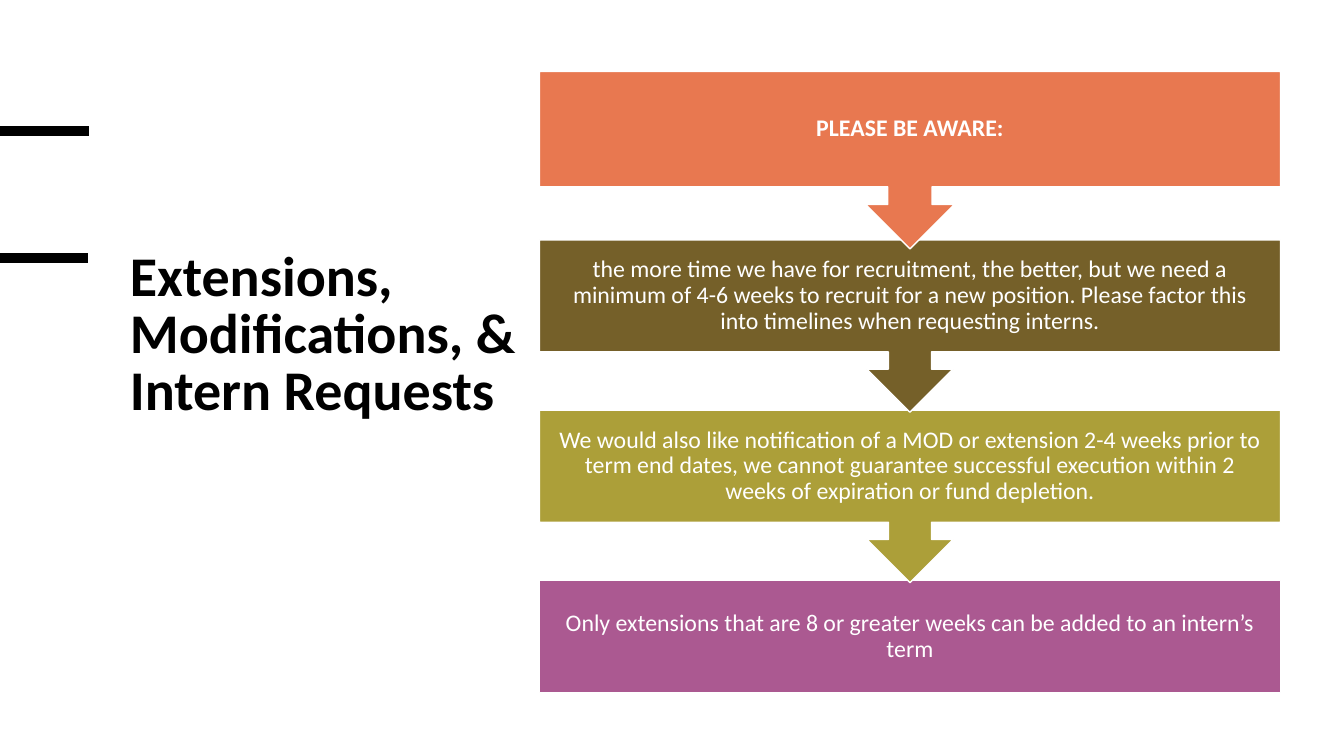
from lxml.etree import SubElement
from pptx import Presentation
from pptx.dml.color import RGBColor
from pptx.enum.shapes import MSO_CONNECTOR, MSO_SHAPE
from pptx.enum.text import MSO_ANCHOR, PP_ALIGN
from pptx.oxml.ns import qn
from pptx.util import Inches, Pt

COLORS = {
    "black": "000000",
    "white": "FFFFFF",
    "orange": "E87850",
    "brown": "756029",
    "olive": "AC9F39",
    "purple": "AB5991",
}

TITLE = "Extensions, Modifications, & Intern Requests"
TITLE_BOX = (1.19, 2.44, 4.16, 3.67)
ACCENT_RULES = [(0, 0.88, 1.3), (-0.01, 0.87, 2.56)]

STEPS = [
    ("PLEASE BE AWARE:", "orange", 0.71, 1.76, True),
    ("the more time we have for recruitment, the better, but we need a minimum of "
     "4-6 weeks to recruit for a new position. Please factor this into timelines "
     "when requesting interns.", "brown", 2.38, 1.71, False),
    ("We would also like notification of a MOD or extension 2-4 weeks prior to term "
     "end dates, we cannot guarantee successful execution within 2 weeks of "
     "expiration or fund depletion.", "olive", 4.07, 1.71, False),
    ("Only extensions that are 8 or greater weeks can be added to an intern’s term",
     "purple", 5.76, 1.11, False),
]
STEP_LEFT, STEP_WIDTH, STEP_INSET = 5.35, 7.35, 0.13


def rgb(name):
    return RGBColor.from_string(COLORS[name])


def write(frame, text, size, color, bold=False, align=PP_ALIGN.LEFT,
          anchor=MSO_ANCHOR.TOP, spacing=0.9, inset=None):
    frame.word_wrap = True
    frame.vertical_anchor = anchor
    if inset is not None:
        frame.margin_left = frame.margin_right = Inches(inset)
        frame.margin_top = frame.margin_bottom = Inches(inset)
    paragraph = frame.paragraphs[0]
    paragraph.alignment = align
    paragraph.line_spacing = spacing
    run = paragraph.add_run()
    run.text = text
    run.font.name = "Calibri"
    run.font.size = Pt(size)
    run.font.bold = bold
    run.font.color.rgb = rgb(color)


def main():
    deck = Presentation()
    deck.slide_width, deck.slide_height = Inches(13.33), Inches(7.5)
    slide = deck.slides.add_slide(deck.slide_layouts[6])

    for start, end, y in ACCENT_RULES:
        rule = slide.shapes.add_connector(
            MSO_CONNECTOR.STRAIGHT, Inches(start), Inches(y), Inches(end), Inches(y))
        rule.line.color.rgb = rgb("black")
        rule.line.width = Pt(6.75)
        SubElement(rule._element.spPr, qn("a:effectLst"))

    title = slide.shapes.add_textbox(*map(Inches, TITLE_BOX))
    write(title.text_frame, TITLE, 40, "black", bold=True, spacing=0.85)

    for text, color, top, height, bold in reversed(STEPS):
        is_last = text == STEPS[-1][0]
        outline = MSO_SHAPE.RECTANGLE if is_last else MSO_SHAPE.DOWN_ARROW_CALLOUT
        step = slide.shapes.add_shape(
            outline, Inches(STEP_LEFT), Inches(top), Inches(STEP_WIDTH), Inches(height))
        step.shadow.inherit = False
        step.fill.solid()
        step.fill.fore_color.rgb = rgb(color)
        step.line.color.rgb = rgb("white")
        step.line.width = Pt(1)
        write(step.text_frame, text, 17, "white", bold=bold, align=PP_ALIGN.CENTER,
              anchor=MSO_ANCHOR.MIDDLE, inset=STEP_INSET)

    deck.save("out.pptx")


if __name__ == "__main__":
    main()
